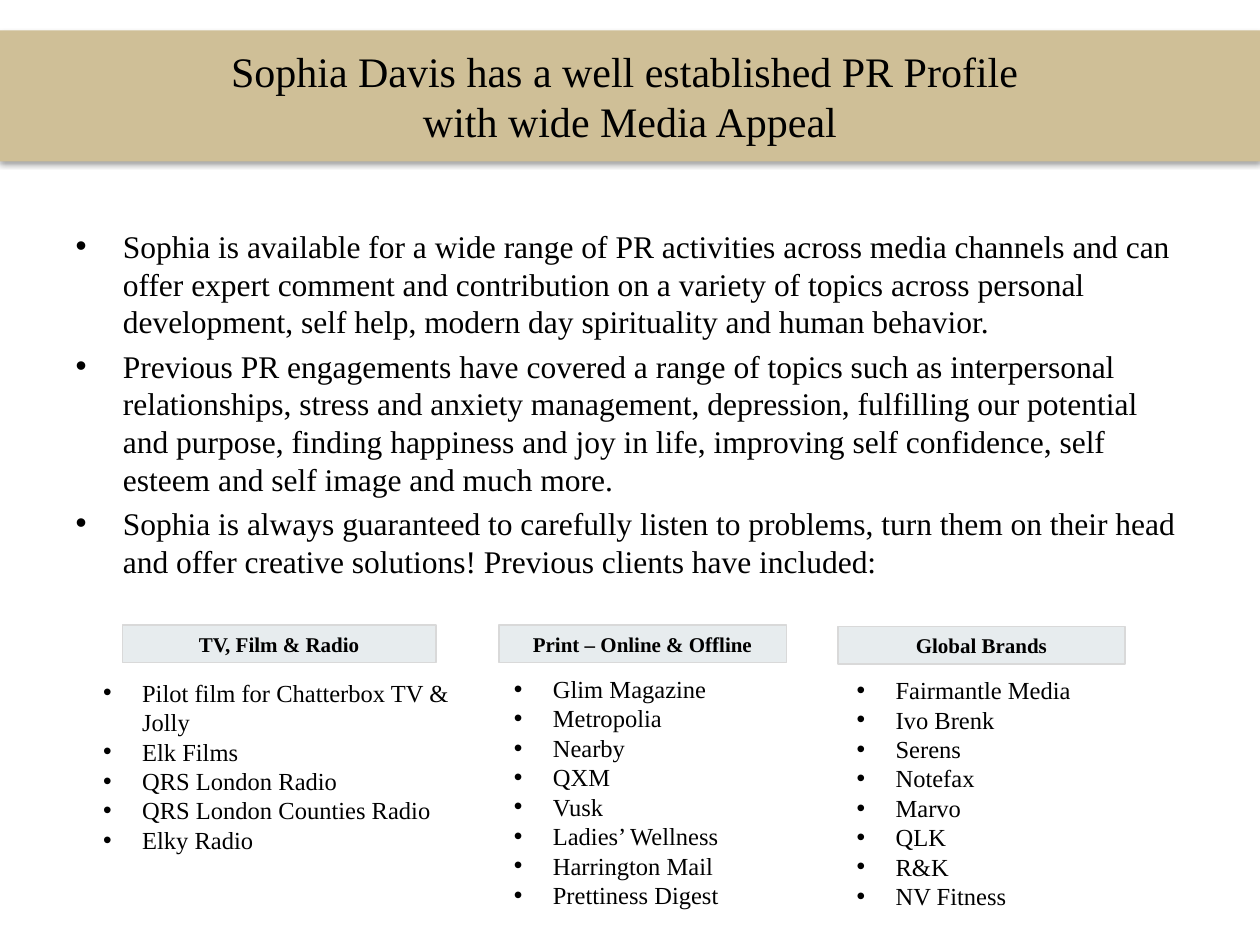
from lxml import etree
from pptx import Presentation, util as u
from pptx.dml.color import RGBColor
from pptx.enum import shapes, text
from pptx.oxml.ns import qn

COLORS = {"band": "CFBF97", "header": "DAE2E5", "border": "D9D9D9", "text": "000000"}
FONT = "Times New Roman"
TITLE_FONT = {"name": FONT, "size": u.Pt(24)}
BODY_FONT = {"name": FONT, "size": u.Pt(18)}
HEADER_FONT = {"name": FONT, "size": u.Pt(12), "bold": True}
LIST_FONT = {"name": FONT, "size": u.Pt(14)}
LIST_INDENT = u.Inches(0.31)

TITLE = "Sophia Davis has a well established PR Profile \vwith wide Media Appeal"
POINTS = [
    "Sophia is available for a wide range of PR activities across media channels and can "
    "offer expert comment and contribution on a variety of topics across personal "
    "development, self help, modern day spirituality and human behavior.",
    "Previous PR engagements have covered a range of topics such as interpersonal "
    "relationships, stress and anxiety management, depression, fulfilling our potential "
    "and purpose, finding happiness and joy in life, improving self confidence, self "
    "esteem and self image and much more.",
    "Sophia is always guaranteed to carefully listen to problems, turn them on their head "
    "and offer creative solutions! Previous clients have included:",
]
# Heading, heading box, list box, clients
COLUMNS = [
    ("TV, Film & Radio", (0.97, 4.96, 2.49, 0.3), (0.72, 5.33, 3.26, 1.51),
     ["Pilot film for Chatterbox TV & Jolly", "Elk Films", "QRS London Radio",
      "QRS London Counties Radio", "Elky Radio"]),
    ("Print – Online & Offline", (3.96, 4.96, 2.28, 0.3), (3.98, 5.3, 2.27, 2.22),
     ["Glim Magazine", "Metropolia", "Nearby", "QXM", "Vusk",
      "Ladies’ Wellness", "Harrington Mail", "Prettiness Digest"]),
    ("Global Brands", (6.65, 4.97, 2.28, 0.3), (6.7, 5.31, 2.27, 2.22),
     ["Fairmantle Media", "Ivo Brenk", "Serens", "Notefax", "Marvo",
      "QLK", "R&K", "NV Fitness"]),
]


def set_attributes(target, values):
    for name, value in values.items():
        setattr(target, name, value)


def place(shape, box):
    names = ("left", "top", "width", "height")
    set_attributes(shape, dict(zip(names, map(u.Inches, box))))


def set_fill(shape, color):
    shape.fill.solid()
    shape.fill.fore_color.rgb = RGBColor.from_string(COLORS[color])


def write(frame, lines, font, alignment=None):
    for index, line in enumerate(lines):
        paragraph = frame.paragraphs[0] if index == 0 else frame.add_paragraph()
        paragraph.text = line
        paragraph.alignment = alignment
        for run in paragraph.runs:
            set_attributes(run.font, font)
            run.font.color.rgb = RGBColor.from_string(COLORS["text"])


def add_bullet(paragraph):
    properties = paragraph._p.get_or_add_pPr()
    properties.set("marL", str(LIST_INDENT))
    properties.set("indent", str(-LIST_INDENT))
    etree.SubElement(properties, qn("a:buFont"), typeface="Arial")
    etree.SubElement(properties, qn("a:buChar"), char="•")


def add_shadow(shape):
    shape.shadow.inherit = False
    effects = shape._element.spPr.find(qn("a:effectLst"))
    shadow = etree.SubElement(
        effects, qn("a:outerShdw"), blurRad=str(u.Pt(3.1)), dist=str(u.Pt(1.8)),
        dir="5400000", rotWithShape="0")
    color = etree.SubElement(shadow, qn("a:srgbClr"), val=COLORS["text"])
    etree.SubElement(color, qn("a:alpha"), val="35000")


def fill_title(slide):
    title = slide.shapes.title
    place(title, (0, 0.24, 10, 1.04))
    set_fill(title, "band")
    add_shadow(title)
    set_attributes(title.text_frame, {
        "auto_size": text.MSO_AUTO_SIZE.NONE, "vertical_anchor": text.MSO_ANCHOR.MIDDLE})
    write(title.text_frame, [TITLE], TITLE_FONT, text.PP_ALIGN.CENTER)


def fill_body(slide):
    body = slide.placeholders[1]
    place(body, (0.5, 1.75, 9, 4.95))
    body.text_frame.auto_size = text.MSO_AUTO_SIZE.NONE
    write(body.text_frame, POINTS, BODY_FONT)


def add_header(slide, heading, box):
    header = slide.shapes.add_shape(shapes.MSO_SHAPE.RECTANGLE, *map(u.Inches, box))
    header.shadow.inherit = False
    set_fill(header, "header")
    color = header._element.spPr.find(qn("a:solidFill"))[0]
    etree.SubElement(color, qn("a:alpha"), val="64000")
    header.line.color.rgb = RGBColor.from_string(COLORS["border"])
    header.line.width = u.Pt(0.75)
    set_attributes(header.text_frame, {
        "word_wrap": True, "auto_size": text.MSO_AUTO_SIZE.SHAPE_TO_FIT_TEXT,
        "vertical_anchor": text.MSO_ANCHOR.TOP})
    write(header.text_frame, [heading], HEADER_FONT, text.PP_ALIGN.CENTER)


def add_list(slide, clients, box):
    frame = slide.shapes.add_textbox(*map(u.Inches, box)).text_frame
    set_attributes(frame, {
        "word_wrap": True, "auto_size": text.MSO_AUTO_SIZE.SHAPE_TO_FIT_TEXT})
    write(frame, clients, LIST_FONT)
    for paragraph in frame.paragraphs:
        add_bullet(paragraph)


def main():
    presentation = Presentation()
    presentation.slide_width = u.Inches(10)
    presentation.slide_height = u.Inches(7.5)
    slide = presentation.slides.add_slide(presentation.slide_layouts[1])

    # Title band and main points
    fill_title(slide)
    fill_body(slide)

    # Client columns
    for heading, header_box, list_box, clients in COLUMNS:
        add_header(slide, heading, header_box)
        add_list(slide, clients, list_box)

    presentation.save("out.pptx")


if __name__ == "__main__":
    main()
